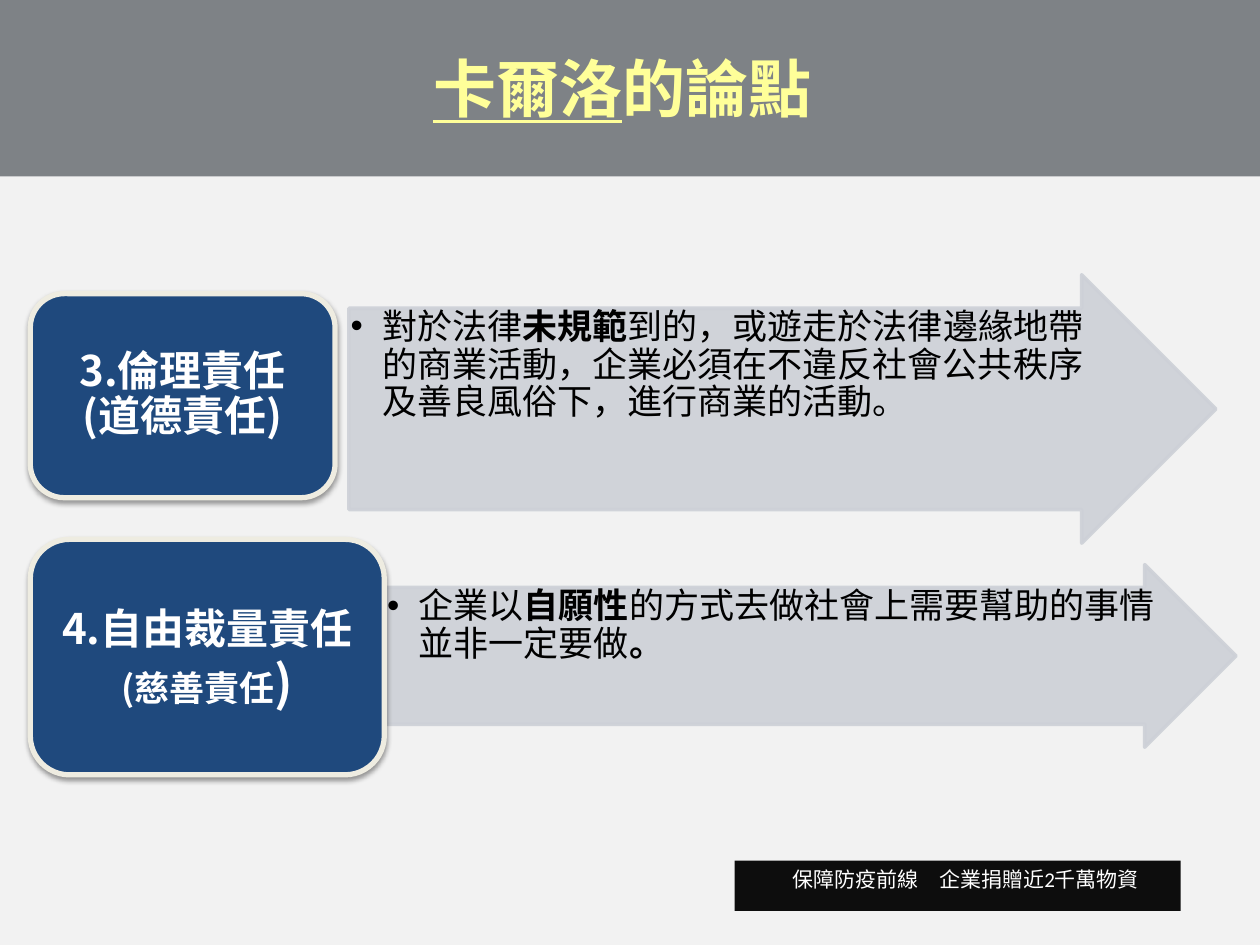
from lxml import etree
from pptx import Presentation
from pptx.dml.color import RGBColor
from pptx.enum.shapes import MSO_SHAPE
from pptx.enum.text import MSO_ANCHOR, MSO_AUTO_SIZE, PP_ALIGN
from pptx.oxml.ns import qn
from pptx.util import Pt

ARROW, ROUND, RECT = MSO_SHAPE.RIGHT_ARROW, MSO_SHAPE.ROUNDED_RECTANGLE, MSO_SHAPE.RECTANGLE
TOP, MIDDLE, BOTTOM = MSO_ANCHOR.TOP, MSO_ANCHOR.MIDDLE, MSO_ANCHOR.BOTTOM
LEFT, CENTER = PP_ALIGN.LEFT, PP_ALIGN.CENTER
FIXED = MSO_AUTO_SIZE.NONE
PAPER = RGBColor(0xF2, 0xF2, 0xF2)
SLATE = RGBColor(0x0C, 0x14, 0x1C)
GRAY = RGBColor(0xCD, 0xD0, 0xD7)
NAVY = RGBColor(0x1F, 0x49, 0x7D)
CREAM = RGBColor(0xEE, 0xEC, 0xE1)
YELLOW = RGBColor(0xFF, 0xFF, 0x99)
INK = RGBColor(0x0D, 0x0D, 0x0D)
BLACK = RGBColor(0, 0, 0)
WHITE = RGBColor(255, 255, 255)
CJK = "Noto Sans CJK SC"

TITLE = [("卡爾洛", {"underline": True}), ("的論點", {})]
NOTE = [("保障防疫前線\u3000企業捐贈近2千萬物資", {})]
BOLD = {"bold": True}
ROWS = [
    {
        "arrow": (199.4, 157, 495.4, 153.4),
        "body": (199.4, 175.7, 437.8, 115.2),
        "box": (17.3, 167.8, 174.2, 116.6),
        "label": [[("3.倫理責任", {})], [("(道德責任)", {})]],
        "space": 0.9,
        "text": [
            ("對於法律", {}), ("未規範", BOLD),
            ("到的，或遊走於法律邊緣地帶的商業活動，企業必須在不違反社會公共秩序及善良風俗下，進行商業的活動。", {}),
        ],
    },
    {
        "arrow": (220.3, 322.6, 486, 104.4),
        "body": (220.3, 335.5, 447.1, 78.5),
        "box": (17.3, 308.2, 202.3, 134.6),
        "label": [[("4.自由裁量責任", {}), ("(慈善責任", {"size": Pt(20)}), (")", {"size": Pt(28)})]],
        "space": 1.0,
        "text": [
            ("企業以", {}), ("自願性", BOLD),
            ("的方式去做社會上需要幫助的事情並非一定要做", {}), ("。", BOLD),
        ],
    },
]

deck = Presentation()
deck.slide_width, deck.slide_height = Pt(720), Pt(540)
slide = deck.slides.add_slide(deck.slide_layouts[3])
slide.background.fill.solid()
slide.background.fill.fore_color.rgb = PAPER
shapes = slide.shapes


def fade(fill, pct):
    color = fill._xPr.find(qn("a:solidFill"))[0]
    etree.SubElement(color, qn("a:alpha"), val=str(pct * 1000))


def draw(kind, area, color, alpha=100, edge=None, width=0, adjust=()):
    shape = shapes.add_shape(kind, *map(Pt, area))
    shape.shadow.inherit = False
    shape.fill.solid()
    shape.fill.fore_color.rgb = color
    for i, value in enumerate(adjust):
        shape.adjustments[i] = value
    if edge is None:
        shape.line.fill.background()
    else:
        shape.line.color.rgb = edge
        shape.line.width = Pt(width)
    if alpha < 100:
        fade(shape.fill, alpha)
        if edge is not None:
            fade(shape.line.fill, alpha)
    return shape


def shade(shape):
    list_ = shape._element.spPr.find(qn("a:effectLst"))
    outer = etree.SubElement(list_, qn("a:outerShdw"), blurRad=str(Pt(3.1)),
                             dist=str(Pt(1.6)), dir="5400000", rotWithShape="0")
    color = etree.SubElement(outer, qn("a:srgbClr"), val=str(BLACK))
    etree.SubElement(color, qn("a:alpha"), val="38000")


def place(shape, area):
    shape.left, shape.top, shape.width, shape.height = map(Pt, area)
    shapes._spTree.append(shape._element)


def write(shape, paras, size, color, bold=False, align=LEFT, anchor=TOP,
          pad=(7.2, 3.6), space=1.0, face=CJK):
    frame = shape.text_frame
    frame.word_wrap, frame.auto_size = True, FIXED
    frame.vertical_anchor = anchor
    frame.margin_left = frame.margin_right = Pt(pad[0])
    frame.margin_top = frame.margin_bottom = Pt(pad[1])
    for i, runs in enumerate(paras):
        para = frame.add_paragraph() if i else frame.paragraphs[0]
        para.alignment, para.line_spacing = align, space
        para.space_before = Pt(0)
        font = para.font
        font.size, font.bold, font.name = Pt(size), bold, face
        font.color.rgb = color
        for text, style in runs:
            run = para.add_run()
            run.text = text
            for key, value in style.items():
                setattr(run.font, key, value)
            run.font.name = face
            latin = run._r.rPr.find(qn("a:latin"))
            latin.addnext(etree.Element(qn("a:ea"), typeface=CJK))


for row, body in zip(ROWS, list(slide.placeholders)[1:]):
    draw(ARROW, row["arrow"], GRAY, 90, GRAY, 2, (0.75, 0.5))
    place(body, row["body"])
    write(body, [row["text"]], 20, BLACK, pad=(0.9, 0.9), space=0.9)
    props = body.text_frame.paragraphs[0]._p.get_or_add_pPr()
    props.set("marL", str(Pt(18)))
    props.set("indent", str(Pt(-18)))
    box = draw(ROUND, row["box"], NAVY, edge=CREAM, width=3)
    shade(box)
    write(box, row["label"], 24, WHITE, True, CENTER, MIDDLE, space=row["space"])

draw(RECT, (0, 0, 720, 100.8), SLATE, 50)
place(shapes.title, (36.7, 12.2, 637.9, 62.6))
write(shapes.title, [TITLE], 36, YELLOW, True, CENTER, BOTTOM, (5.8, 2.9), 0.9)

draw(RECT, (419.8, 491.8, 254.9, 28.8), INK)
note = shapes.add_textbox(*map(Pt, (445.7, 491.8, 221, 21.6)))
write(note, [NOTE], 12, WHITE, face="Calibri")

deck.save("out.pptx")
